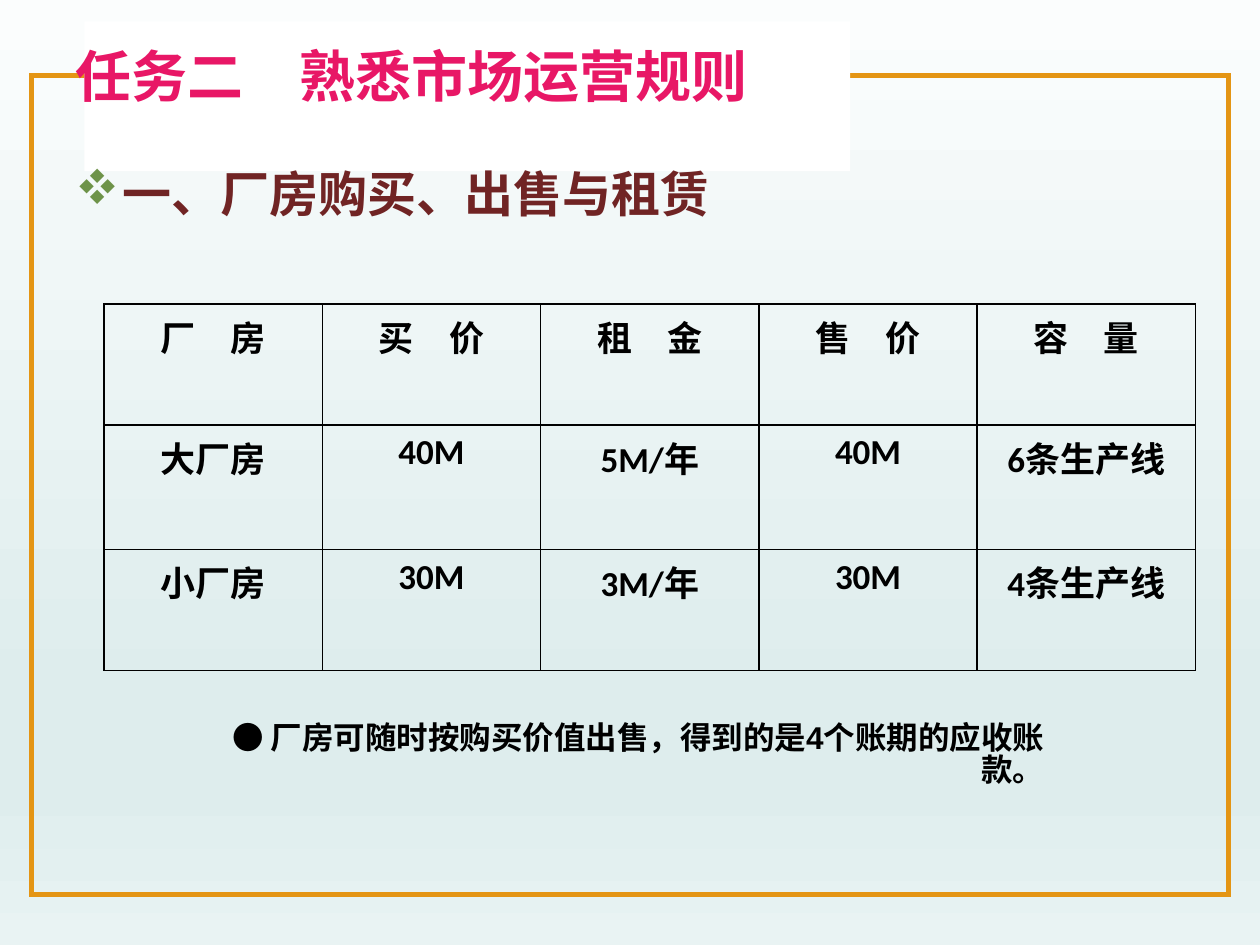
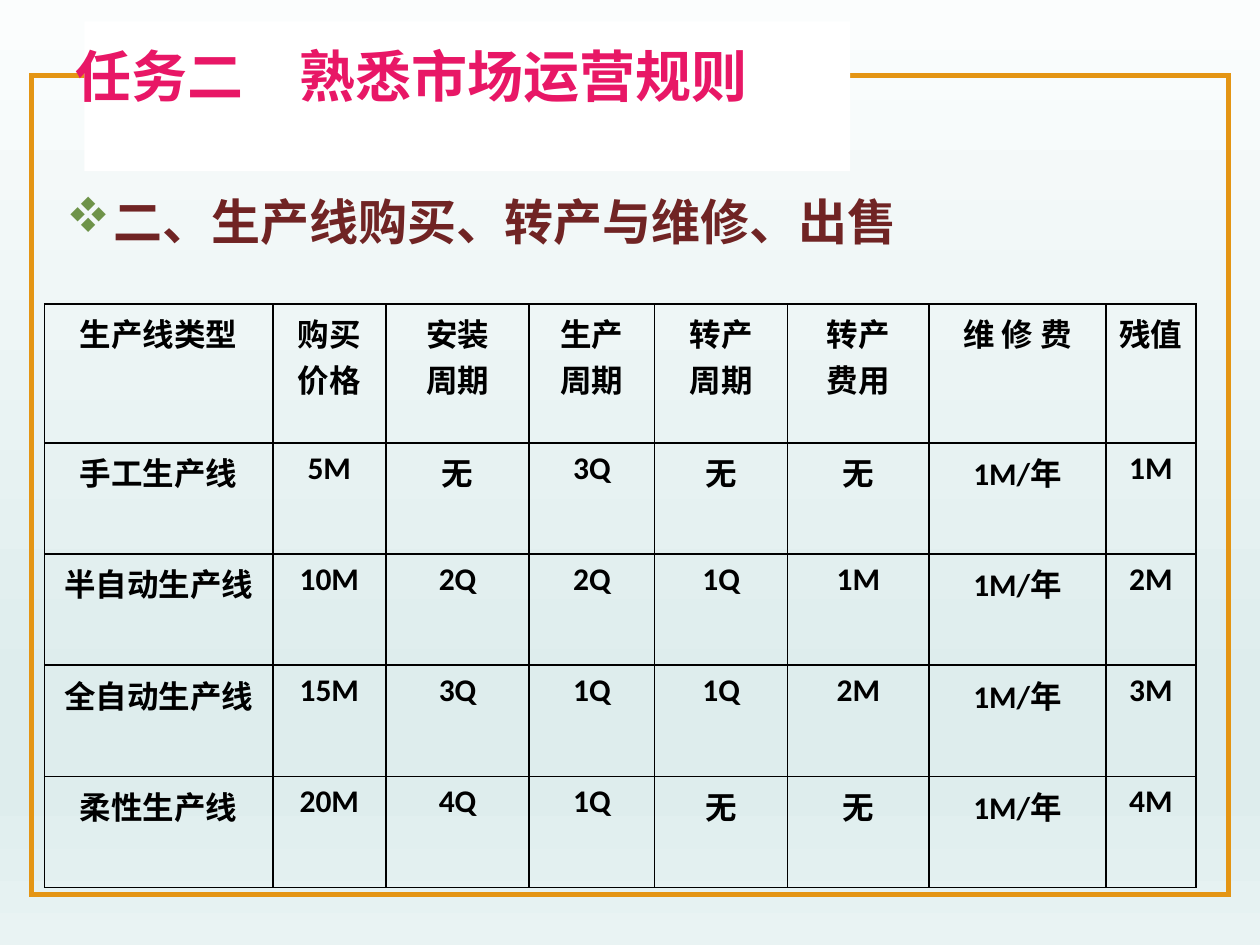
from dataclasses import dataclass

from lxml import etree
from pptx import Presentation
from pptx.dml.color import RGBColor
from pptx.enum.shapes import MSO_SHAPE
from pptx.enum.text import MSO_ANCHOR, MSO_AUTO_SIZE, PP_ALIGN
from pptx.oxml.ns import qn
from pptx.util import Cm, Pt

RECTANGLE = MSO_SHAPE.RECTANGLE
TOP, MIDDLE = MSO_ANCHOR.TOP, MSO_ANCHOR.MIDDLE
LEFT, CENTER, RIGHT = PP_ALIGN.LEFT, PP_ALIGN.CENTER, PP_ALIGN.RIGHT
NO_AUTOFIT = MSO_AUTO_SIZE.NONE
TITLE_ONLY = 5


@dataclass(frozen=True)
class Style:
    size: float
    color: str
    latin: str
    east_asian: str = "Noto Sans CJK SC"


class Theme:
    background = [(0, "FBFDFD"), (74, "DEEDED"), (83, "DEEDED"), (100, "E9F3F3")]
    frame = "E49514"
    title_band = "FFFFFF"
    bullet = "6E9349"
    black = "000000"
    frame_width = Pt(3)
    border_width = Pt(1)
    title = Style(32, "E81766", "Noto Sans CJK JP", "Noto Sans CJK JP")
    heading = Style(28, "702424", "Noto Sans CJK SC")
    plant_table = Style(20, black, "Calibri")
    line_table = Style(18, black, "Calibri")
    note = Style(18, black, "Arial")


TITLE = "任务二　熟悉市场运营规则"

PLANTS = [
    ["厂　房", "买　价", "租　金", "售　价", "容　量"],
    ["大厂房", "40M", "5M/年", "40M", "6条生产线"],
    ["小厂房", "30M", "3M/年", "30M", "4条生产线"],
]

PRODUCTION_LINES = [
    ["生产线类型", "购买\n价格", "安装\n周期", "生产\n周期",
     "转产\n周期", "转产\n费用", "维 修 费", "残值"],
    ["手工生产线", "5M", "无", "3Q", "无", "无", "1M/年", "1M"],
    ["半自动生产线", "10M", "2Q", "2Q", "1Q", "1M", "1M/年", "2M"],
    ["全自动生产线", "15M", "3Q", "1Q", "1Q", "2M", "1M/年", "3M"],
    ["柔性生产线", "20M", "4Q", "1Q", "无", "无", "1M/年", "4M"],
]


def add_run(paragraph, text, style):
    run = paragraph.add_run()
    run.text = text
    run.font.size = Pt(style.size)
    run.font.bold = True
    run.font.color.rgb = RGBColor.from_string(style.color)
    run.font.name = style.latin
    properties = run._r.get_or_add_rPr()
    etree.SubElement(properties, qn("a:ea"), typeface=style.east_asian)


def fill_text(text_frame, text, style, alignment, line_spacing=1.0):
    """Write one paragraph for each line of text."""
    for index, line in enumerate(text.split("\n")):
        paragraph = text_frame.add_paragraph() if index else text_frame.paragraphs[0]
        paragraph.alignment = alignment
        paragraph.line_spacing = line_spacing
        add_run(paragraph, line, style)


def add_text_box(slide, box, text, style, alignment, line_spacing=1.0, anchor=TOP):
    text_frame = slide.shapes.add_textbox(*map(Cm, box)).text_frame
    text_frame.word_wrap = True
    text_frame.vertical_anchor = anchor
    fill_text(text_frame, text, style, alignment, line_spacing)
    return text_frame


def add_rectangle(slide, box, fill=None, line=None):
    shape = slide.shapes.add_shape(RECTANGLE, *map(Cm, box))
    shape.shadow.inherit = False
    if fill:
        shape.fill.solid()
        shape.fill.fore_color.rgb = RGBColor.from_string(fill)
    else:
        shape.fill.background()
    if line:
        shape.line.color.rgb = RGBColor.from_string(line)
        shape.line.width = Theme.frame_width
        outline = shape.element.find(".//" + qn("a:ln"))
        etree.SubElement(outline, qn("a:miter"), lim="800000")
    else:
        shape.line.fill.background()
    return shape


def set_background(layout):
    fill = layout.background.fill
    fill.gradient()
    fill.gradient_angle = 270
    stops = layout.element.find(".//" + qn("a:gsLst"))
    for stop in list(stops):
        stops.remove(stop)
    for position, color in Theme.background:
        stop = etree.SubElement(stops, qn("a:gs"), pos=str(position * 1000))
        etree.SubElement(stop, qn("a:srgbClr"), val=color)


def decorate_layout(layout, slide):
    """Give the layout its background, frame and title band."""
    set_background(layout)
    frame = add_rectangle(slide, (0.64, 1.52, 24.13, 16.51), line=Theme.frame)
    band = add_rectangle(slide, (1.7, 0.43, 15.44, 3.02), fill=Theme.title_band)
    for shape in (frame, band):
        layout.shapes.element.append(shape.element)


def set_title(slide):
    title = slide.shapes.title
    title.left, title.top, title.width, title.height = map(Cm, (1.3, 0.7, 14, 1.63))
    text_frame = title.text_frame
    text_frame.auto_size = NO_AUTOFIT
    text_frame.word_wrap = False
    text_frame.vertical_anchor = MIDDLE
    text_frame.margin_left = text_frame.margin_right = 0
    text_frame.margin_top = text_frame.margin_bottom = 0
    fill_text(text_frame, TITLE, Theme.title, CENTER)


def add_heading(slide, left, top, text):
    text_frame = add_text_box(slide, (left, top, 21, 1.6), text, Theme.heading, LEFT)
    properties = text_frame.paragraphs[0]._p.get_or_add_pPr()
    indent = Cm(0.95)
    properties.set("marL", str(indent))
    properties.set("indent", str(-indent))
    color = etree.SubElement(properties, qn("a:buClr"))
    etree.SubElement(color, qn("a:srgbClr"), val=Theme.bullet)
    # In Wingdings the letter v is the four-diamond bullet
    etree.SubElement(properties, qn("a:buFont"), typeface="Wingdings", charset="2")
    etree.SubElement(properties, qn("a:buChar"), char="v")


def set_borders(cell):
    properties = cell._tc.get_or_add_tcPr()
    for position, side in enumerate(("lnL", "lnR", "lnT", "lnB")):
        line = etree.Element(qn("a:" + side), w=str(Theme.border_width))
        fill = etree.SubElement(line, qn("a:solidFill"))
        etree.SubElement(fill, qn("a:srgbClr"), val=Theme.black)
        properties.insert(position, line)


def add_grid(slide, left, top, rows, widths, heights, style):
    box = map(Cm, (left, top, sum(widths), sum(heights)))
    table = slide.shapes.add_table(len(rows), len(widths), *box).table
    table.first_row = table.horz_banding = False
    for column, width in zip(table.columns, widths):
        column.width = Cm(width)
    for row, height, texts in zip(table.rows, heights, rows):
        row.height = Cm(height)
        for cell, text in zip(row.cells, texts):
            cell.fill.background()
            set_borders(cell)
            fill_text(cell.text_frame, text, style, CENTER)


def build_plant_slide(slide):
    set_title(slide)
    add_heading(slide, 1.27, 3.18, "一、厂房购买、出售与租赁")
    add_grid(slide, 2.1, 6.13, PLANTS, [4.4] * 5, [2.44, 2.51, 2.44], Theme.plant_table)
    note = "● 厂房可随时按购买价值出售，得到的是4个账期的应收账款。"
    add_text_box(slide, (4, 14.33, 17.3, 1.83), note, Theme.note, RIGHT, 0.84, MIDDLE)


def build_production_line_slide(slide):
    set_title(slide)
    add_heading(slide, 1.09, 3.73, "二、生产线购买、转产与维修、出售")
    widths = [4.6, 2.28, 2.89, 2.53, 2.68, 2.85, 3.57, 1.81]
    add_grid(slide, 0.9, 6.13, PRODUCTION_LINES, widths, [2.8] + [2.24] * 4,
             Theme.line_table)


def main():
    presentation = Presentation()
    presentation.slide_width, presentation.slide_height = Cm(25.4), Cm(19.05)
    layout = presentation.slide_layouts[TITLE_ONLY]
    plant_slide = presentation.slides.add_slide(layout)
    decorate_layout(layout, plant_slide)
    build_plant_slide(plant_slide)
    build_production_line_slide(presentation.slides.add_slide(layout))
    presentation.save("out.pptx")


if __name__ == "__main__":
    main()
